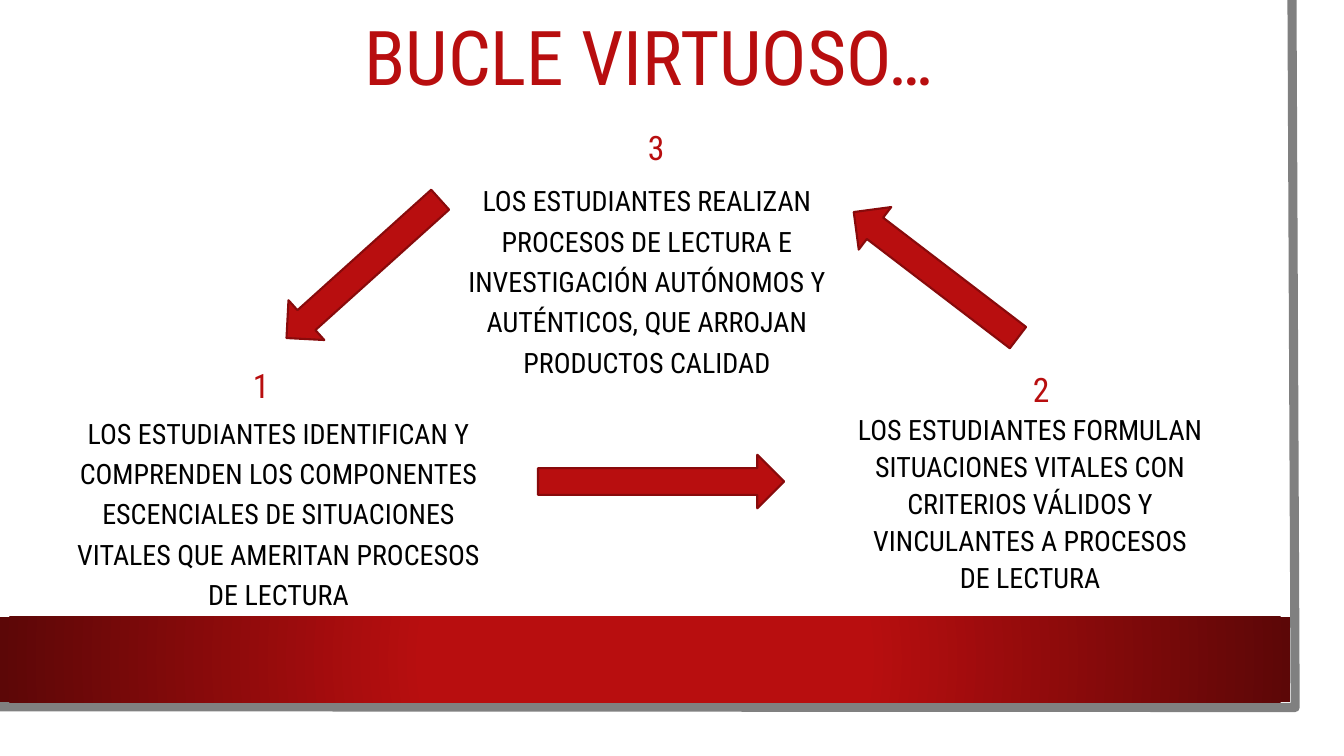
"""Build the slide on the virtuous loop of reading processes."""
from lxml.etree import SubElement
from pptx import Presentation
from pptx.dml.color import RGBColor
from pptx.enum.shapes import MSO_SHAPE
from pptx.enum.text import MSO_ANCHOR, MSO_AUTO_SIZE, PP_ALIGN
from pptx.oxml.ns import qn
from pptx.util import Cm, Pt

RED = RGBColor(0xB8, 0x0E, 0x0F)
ARROW_EDGE = RGBColor(0x88, 0x0A, 0x0B)
DARK_RED = RGBColor(0x5C, 0x07, 0x07)
GREY = RGBColor(0x80, 0x80, 0x80)
BLACK = RGBColor(0, 0, 0)
FONT = "Roboto Condensed"

STEP_1 = ("LOS ESTUDIANTES IDENTIFICAN Y COMPRENDEN LOS COMPONENTES ESCENCIALES "
          "DE SITUACIONES VITALES QUE AMERITAN PROCESOS DE LECTURA")
STEP_2 = ("LOS ESTUDIANTES FORMULAN SITUACIONES VITALES CON CRITERIOS VÁLIDOS "
          "Y VINCULANTES A PROCESOS DE LECTURA")
STEP_3 = ("LOS ESTUDIANTES REALIZAN PROCESOS DE LECTURA E INVESTIGACIÓN "
          "AUTÓNOMOS Y AUTÉNTICOS, QUE ARROJAN PRODUCTOS CALIDAD")


def write(holder, box, text, size, color, anchor, spacing=0.9):
    """Place a text holder and write one centred paragraph in it."""
    holder.left, holder.top, holder.width, holder.height = map(Cm, box)
    frame = holder.text_frame
    frame.word_wrap = True
    frame.auto_size = MSO_AUTO_SIZE.NONE
    frame.vertical_anchor = anchor
    paragraph = frame.paragraphs[0]
    paragraph.alignment = PP_ALIGN.CENTER
    paragraph.line_spacing = spacing
    paragraph.space_before = Pt(0)
    properties = paragraph._p.get_or_add_pPr()
    properties.set("marL", "0")
    properties.set("indent", "0")
    SubElement(properties, qn("a:buNone"))
    run = paragraph.add_run()
    run.text = text
    run.font.name = FONT
    run.font.size = Pt(size)
    run.font.bold = False
    run.font.color.rgb = color


def add_step(number_holder, number_box, number, text_holder, text_box, text, spacing):
    """Write a step of the loop: its number above its description."""
    write(number_holder, number_box, number, 24, RED, MSO_ANCHOR.BOTTOM)
    write(text_holder, text_box, text, 20, BLACK, MSO_ANCHOR.TOP, spacing)


def add_arrow(shapes, left, top, width, rotation):
    """Add a red block arrow."""
    arrow = shapes.add_shape(MSO_SHAPE.RIGHT_ARROW, Cm(left), Cm(top), Cm(width), Cm(1.35))
    arrow.rotation = rotation
    arrow.shadow.inherit = False
    arrow.fill.solid()
    arrow.fill.fore_color.rgb = RED
    arrow.line.color.rgb = ARROW_EDGE
    arrow.line.width = Pt(1.5)


def add_page_edge(shapes):
    """Draw the grey edge along the right and bottom of the page."""
    builder = shapes.build_freeform(Cm(32.56), 0)
    builder.add_line_segments([(Cm(32.64), Cm(17.83)), (Cm(-0.08), Cm(17.81))], close=False)
    edge = builder.convert_to_shape()
    edge.shadow.inherit = False
    edge.fill.background()
    edge.line.color.rgb = GREY
    edge.line.width = Pt(6.5)


def add_band(shapes):
    """Add the bottom band, shaded from its centre outwards."""
    band = shapes.add_shape(MSO_SHAPE.RECTANGLE, 0, Cm(15.54), Cm(32.51), Cm(2.16))
    band.shadow.inherit = False
    band.line.fill.background()
    band.fill.gradient()
    for stop, position, color in zip(band.fill.gradient_stops, (0.34, 1), (RED, DARK_RED)):
        stop.position = position
        stop.color.rgb = color
    gradient = band._element.spPr.find(qn("a:gradFill"))
    gradient.remove(gradient.find(qn("a:lin")))
    radial = SubElement(gradient, qn("a:path"), {"path": "circle"})
    SubElement(radial, qn("a:fillToRect"), dict.fromkeys("ltrb", "50000"))


def main():
    """Build and save the slide."""
    deck = Presentation()
    deck.slide_width, deck.slide_height = Cm(33.87), Cm(19.05)
    slide = deck.slides.add_slide(deck.slide_layouts[4])
    shapes = slide.shapes
    title, number_1, text_1, number_2, text_2 = slide.placeholders
    add_page_edge(shapes)
    add_band(shapes)
    write(title, (1.91, -0.05, 28.88, 3.2), "BUCLE VIRTUOSO…", 54, RED, MSO_ANCHOR.MIDDLE)
    add_step(number_1, (1.98, 8.74, 9.2, 1.6), "1",
             text_1, (1.52, 10.19, 11, 4.22), STEP_1, 1.2)
    add_step(number_2, (21.64, 8.84, 9.2, 1.6), "2",
             text_2, (21.36, 10.19, 9.2, 5.05), STEP_2, 1.1)
    number_3, text_3 = (shapes.add_textbox(0, 0, 0, 0) for _ in range(2))
    add_step(number_3, (11.94, 2.67, 9.2, 1.68), "3",
             text_3, (11.25, 4.34, 10.11, 5.13), STEP_3, 1.2)
    add_arrow(shapes, 13.56, 11.46, 6.2, 0)
    add_arrow(shapes, 20.98, 6.25, 5.21, 217.4)
    add_arrow(shapes, 6.55, 6.1, 5.21, 138)
    deck.save("out.pptx")


if __name__ == "__main__":
    main()
